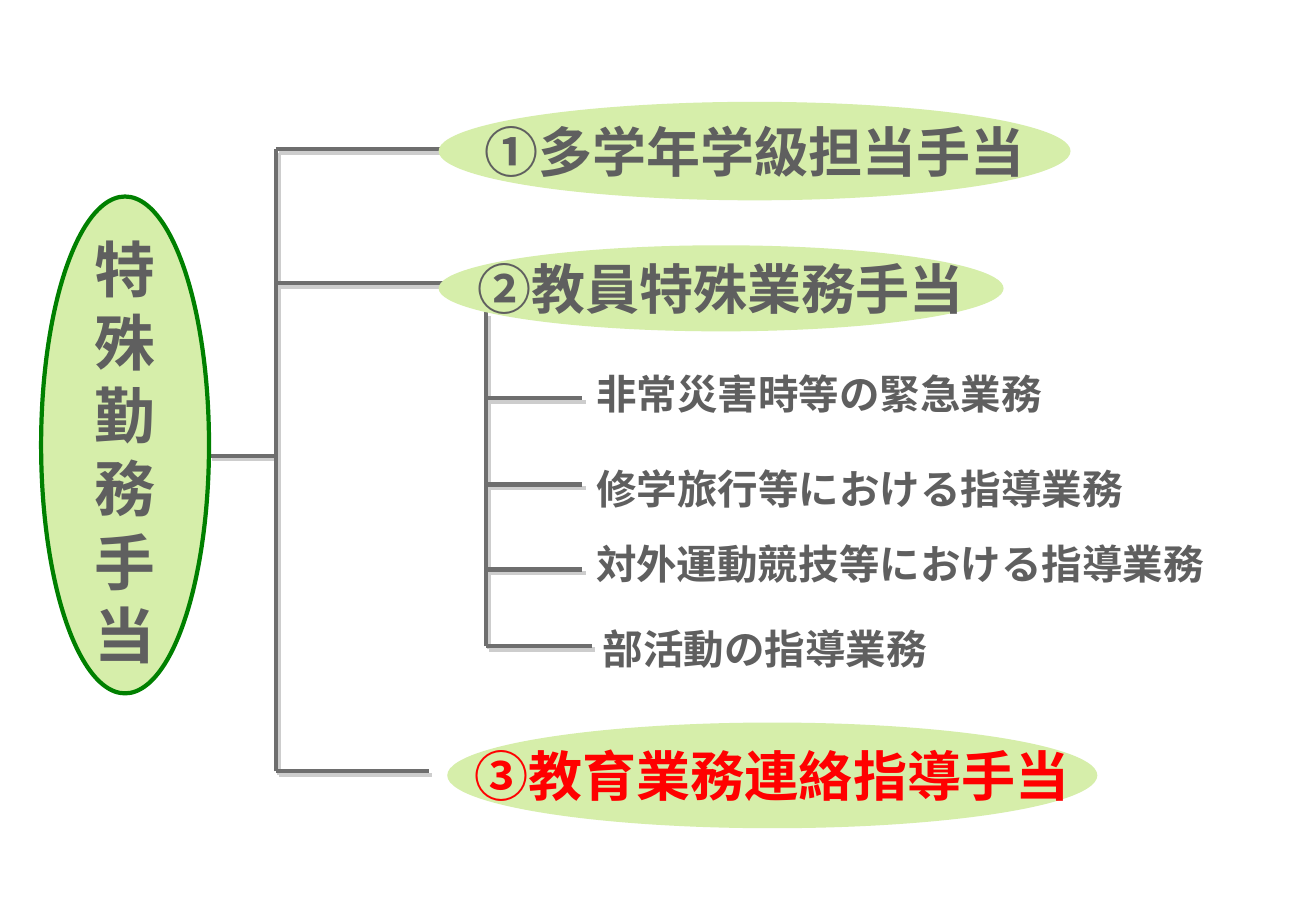
import pptx
import pptx.dml.color
import pptx.enum.shapes
import pptx.enum.text
import pptx.oxml.ns
import pptx.util
from lxml import etree
from pptx.util import Cm

FONT = "Noto Sans CJK JP"
COLORS = {
    "text": "5F5F5F",
    "highlight": "FF0000",
    "oval": "D6EEAA",
    "outline": "008000",
    "line": "6E6E6E",
    "shadow": "CDCDCD",
}

ROOT = "特殊勤務手当"
TRUNK_X, TRUNK_TOP, TRUNK_BOTTOM = 5.77, 3.12, 16.13
BRANCH_X, BRANCH_TOP, BRANCH_BOTTOM = 10.16, 6.53, 13.51

# Allowances: text, left, top, width, height, colour, line y, line end
ALLOWANCES = [
    ("①多学年学級担当手当", 9.17, 2.13, 13.21, 2.06, "text", TRUNK_TOP, 11.96),
    ("②教員特殊業務手当", 9.17, 5.13, 11.81, 1.8, "text", 5.92, BRANCH_X),
    ("③教育業務連絡指導手当", 9.35, 15.11, 13.59, 2.21, "highlight", TRUNK_BOTTOM, 8.97),
]

# Duties: text, left, text middle, line y, line end
DUTIES = [
    ("非常災害時等の緊急業務", 12.46, 8.22, 8.33, 12.17),
    ("修学旅行等における指導業務", 12.46, 10.22, 10.13, 12.17),
    ("対外運動競技等における指導業務", 12.46, 11.79, 11.91, 12.17),
    ("部活動の指導業務", 12.6, 13.56, BRANCH_BOTTOM, 12.37),
]


def color(name):
    return pptx.dml.color.RGBColor.from_string(COLORS[name])


def add_run(paragraph, text, size, color_name):
    run = paragraph.add_run()
    run.text = text
    run.font.size = pptx.util.Pt(size)
    run.font.bold = True
    run.font.name = FONT
    run.font.color.rgb = color(color_name)
    east_asian = etree.SubElement(run._r.get_or_add_rPr(), pptx.oxml.ns.qn("a:ea"))
    east_asian.set("typeface", FONT)


def add_line(slide, x1, y1, x2, y2):
    """Grey line with a hard offset shadow."""
    line = slide.shapes.add_connector(
        pptx.enum.shapes.MSO_CONNECTOR.STRAIGHT, Cm(x1), Cm(y1), Cm(x2), Cm(y2))
    line.line.color.rgb = color("line")
    line.line.width = pptx.util.Pt(2.5)
    qn = pptx.oxml.ns.qn
    effects = etree.SubElement(line._element.spPr, qn("a:effectLst"))
    shadow = etree.SubElement(effects, qn("a:outerShdw"), blurRad="0",
                              dist=str(pptx.util.Pt(2.8)), dir="2700000")
    etree.SubElement(shadow, qn("a:srgbClr"), val=COLORS["shadow"])


def add_oval(slide, left, top, width, height, lines, size, color_name):
    oval = slide.shapes.add_shape(
        pptx.enum.shapes.MSO_SHAPE.OVAL, Cm(left), Cm(top), Cm(width), Cm(height))
    oval.shadow.inherit = False
    oval.fill.solid()
    oval.fill.fore_color.rgb = color("oval")
    oval.line.fill.background()
    frame = oval.text_frame
    frame.word_wrap = False
    frame.vertical_anchor = pptx.enum.text.MSO_ANCHOR.MIDDLE
    for index, text in enumerate(lines):
        paragraph = frame.add_paragraph() if index else frame.paragraphs[0]
        paragraph.alignment = pptx.enum.text.PP_ALIGN.CENTER
        add_run(paragraph, text, size, color_name)
    return oval


def add_root(slide):
    """Outlined oval with one character per line."""
    root = add_oval(slide, 0.86, 4.11, 3.51, 10.39, ROOT, 36, "text")
    root.line.color.rgb = color("outline")
    root.line.width = pptx.util.Pt(2.5)
    root.text_frame.margin_top = Cm(0.37)
    for paragraph in root.text_frame.paragraphs:
        paragraph.line_spacing = pptx.util.Pt(43.4)


def add_label(slide, text, left, middle):
    height = 1.2
    box = slide.shapes.add_textbox(
        Cm(left), Cm(middle - height / 2), pptx.util.Pt(24 * len(text)), Cm(height))
    frame = box.text_frame
    frame.word_wrap = False
    frame.vertical_anchor = pptx.enum.text.MSO_ANCHOR.MIDDLE
    frame.margin_left = frame.margin_right = 0
    frame.margin_top = frame.margin_bottom = 0
    add_run(frame.paragraphs[0], text, 24, "text")


def main():
    presentation = pptx.Presentation()
    presentation.slide_width = Cm(27.51)
    presentation.slide_height = Cm(19.05)
    slide = presentation.slides.add_slide(presentation.slide_layouts[6])

    # Tree lines, behind the ovals
    add_line(slide, 4.37, 9.53, TRUNK_X, 9.53)
    add_line(slide, TRUNK_X, TRUNK_BOTTOM, TRUNK_X, TRUNK_TOP)
    add_line(slide, BRANCH_X, BRANCH_BOTTOM, BRANCH_X, BRANCH_TOP)
    for *_, line_y, line_end in ALLOWANCES:
        add_line(slide, TRUNK_X, line_y, line_end, line_y)
    for *_, line_y, line_end in DUTIES:
        add_line(slide, BRANCH_X, line_y, line_end, line_y)

    # Root and allowances
    add_root(slide)
    for text, left, top, width, height, color_name, *_ in ALLOWANCES:
        add_oval(slide, left, top, width, height, [text], 32, color_name)

    # Duties under the second allowance
    for text, left, middle, *_ in DUTIES:
        add_label(slide, text, left, middle)

    presentation.save("out.pptx")


if __name__ == "__main__":
    main()
